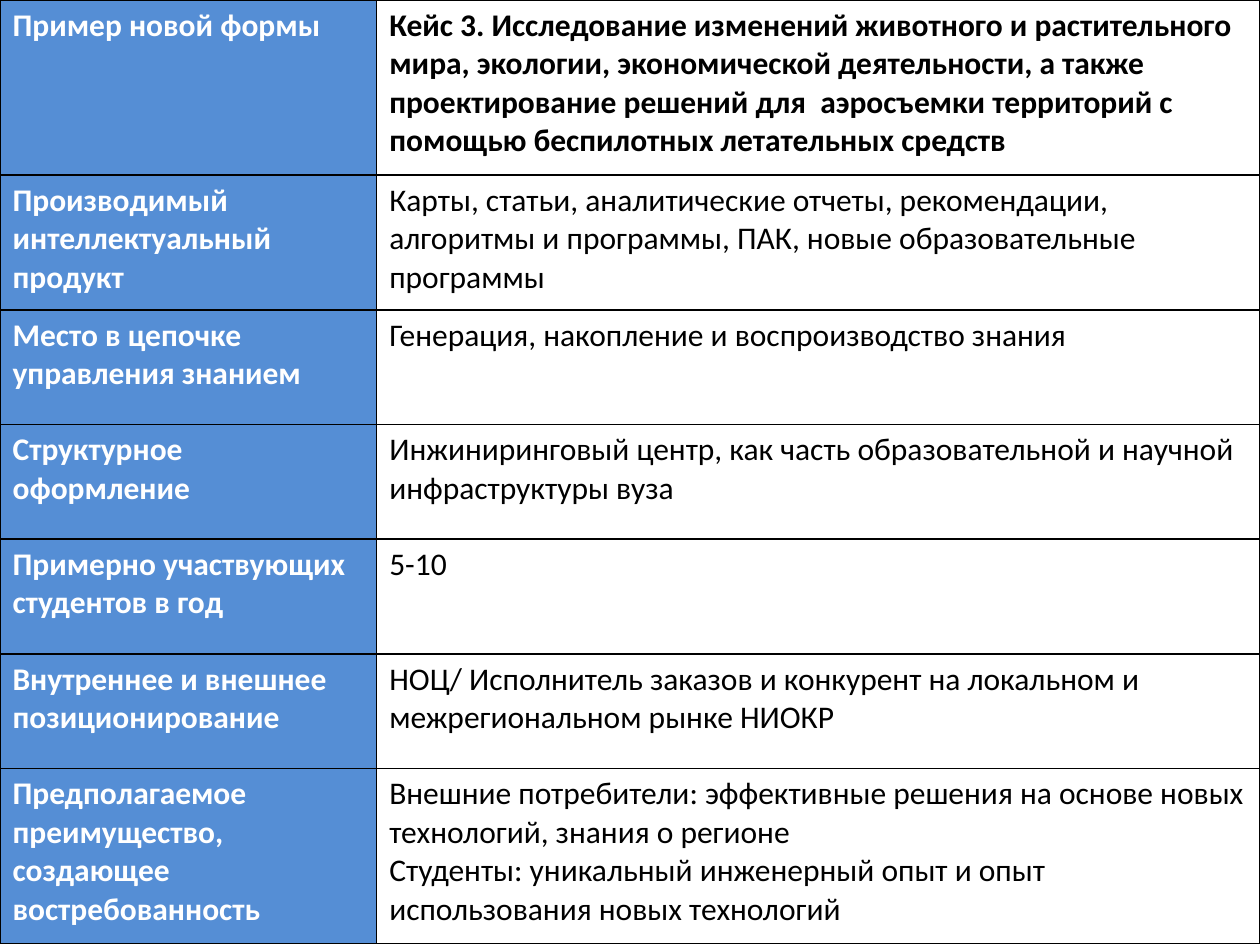
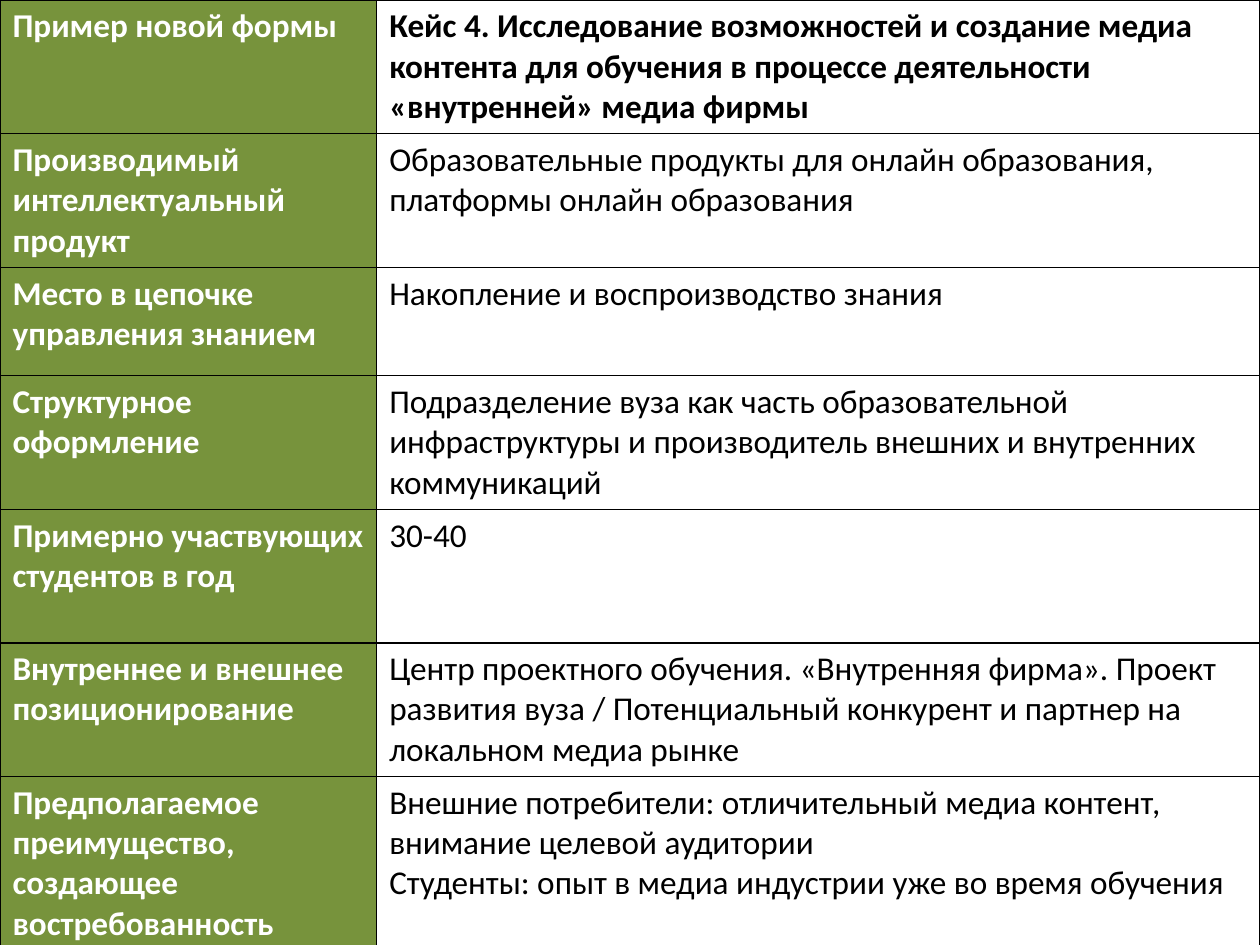
from lxml.etree import SubElement
from pptx import Presentation
from pptx.dml.color import RGBColor
from pptx.oxml.ns import qn
from pptx.util import Inches, Pt

BLUE = RGBColor(0x55, 0x8E, 0xD5)
GREEN = RGBColor(0x77, 0x93, 0x3C)
WHITE = RGBColor(0xFF, 0xFF, 0xFF)
BLACK = RGBColor(0x00, 0x00, 0x00)
FONT = "Calibri"
COLUMN_SHARES = (0.299, 0.701)

ASPECTS = (
    "Пример новой формы",
    "Производимый интеллектуальный продукт",
    "Место в цепочке управления знанием",
    "Структурное оформление",
    "Примерно участвующих студентов в год",
    "Внутреннее и внешнее позиционирование",
    "Предполагаемое преимущество, создающее востребованность",
)

# Each case: label colour, text size, row heights in inches, answers to the aspects
CASES = (
    (BLUE, 18, (1.39, 1.07, 0.91, 0.91, 0.91, 0.91, 1.39), (
        "Кейс 3. Исследование изменений животного и растительного мира, экологии, "
        "экономической деятельности, а также проектирование решений для  аэросъемки "
        "территорий с помощью беспилотных летательных средств",
        "Карты, статьи, аналитические отчеты, рекомендации, алгоритмы и программы, "
        "ПАК, новые образовательные программы",
        "Генерация, накопление и воспроизводство знания",
        "Инжиниринговый центр, как часть образовательной и научной инфраструктуры вуза",
        "5-10",
        "НОЦ/ Исполнитель заказов и конкурент на локальном и межрегиональном рынке НИОКР",
        "Внешние потребители: эффективные решения на основе новых технологий, "
        "знания о регионе\n"
        "Студенты: уникальный инженерный опыт и опыт использования новых технологий",
    )),
    (GREEN, 19, (1.06, 1.06, 0.86, 1.06, 1.06, 1.06, 1.38), (
        "Кейс 4. Исследование возможностей и создание медиа контента для обучения "
        "в процессе деятельности «внутренней» медиа фирмы",
        "Образовательные продукты для онлайн образования, платформы онлайн образования",
        "Накопление и воспроизводство знания",
        "Подразделение вуза как часть образовательной инфраструктуры и производитель "
        "внешних и внутренних коммуникаций",
        "30-40",
        "Центр проектного обучения. «Внутренняя фирма». Проект развития вуза / "
        "Потенциальный конкурент и партнер на локальном медиа рынке",
        "Внешние потребители: отличительный медиа контент, внимание целевой аудитории\n"
        "Студенты: опыт в медиа индустрии уже во время обучения",
    )),
)


def add_borders(cell):
    properties = cell._tc.get_or_add_tcPr()
    # Border lines have to precede the fill
    for position, side in enumerate(("lnL", "lnR", "lnT", "lnB")):
        line = SubElement(properties, qn(f"a:{side}"), w=str(Pt(1)))
        fill = SubElement(line, qn("a:solidFill"))
        SubElement(fill, qn("a:srgbClr"), val=str(BLACK))
        properties.insert(position, line)


def fill_cell(cell, text, size, background, color, bold):
    cell.text = text
    cell.fill.solid()
    cell.fill.fore_color.rgb = background
    for paragraph in cell.text_frame.paragraphs:
        paragraph.font.name = FONT
        paragraph.font.size = Pt(size)
        paragraph.font.bold = bold
        paragraph.font.color.rgb = color
    add_borders(cell)


prs = Presentation()
prs.slide_width = Inches(10)
prs.slide_height = Inches(7.5)

for label_color, size, row_heights, answers in CASES:
    slide = prs.slides.add_slide(prs.slide_layouts[6])
    table = slide.shapes.add_table(
        len(ASPECTS), len(COLUMN_SHARES), 0, 0,
        prs.slide_width, Inches(sum(row_heights))).table
    table.first_row = False
    table.horz_banding = False
    for column, share in zip(table.columns, COLUMN_SHARES):
        column.width = int(prs.slide_width * share)
    for index, (aspect, answer) in enumerate(zip(ASPECTS, answers)):
        table.rows[index].height = Inches(row_heights[index])
        fill_cell(table.cell(index, 0), aspect, size, label_color, WHITE, True)
        fill_cell(table.cell(index, 1), answer, size, WHITE, BLACK, index == 0)

prs.save("out.pptx")
